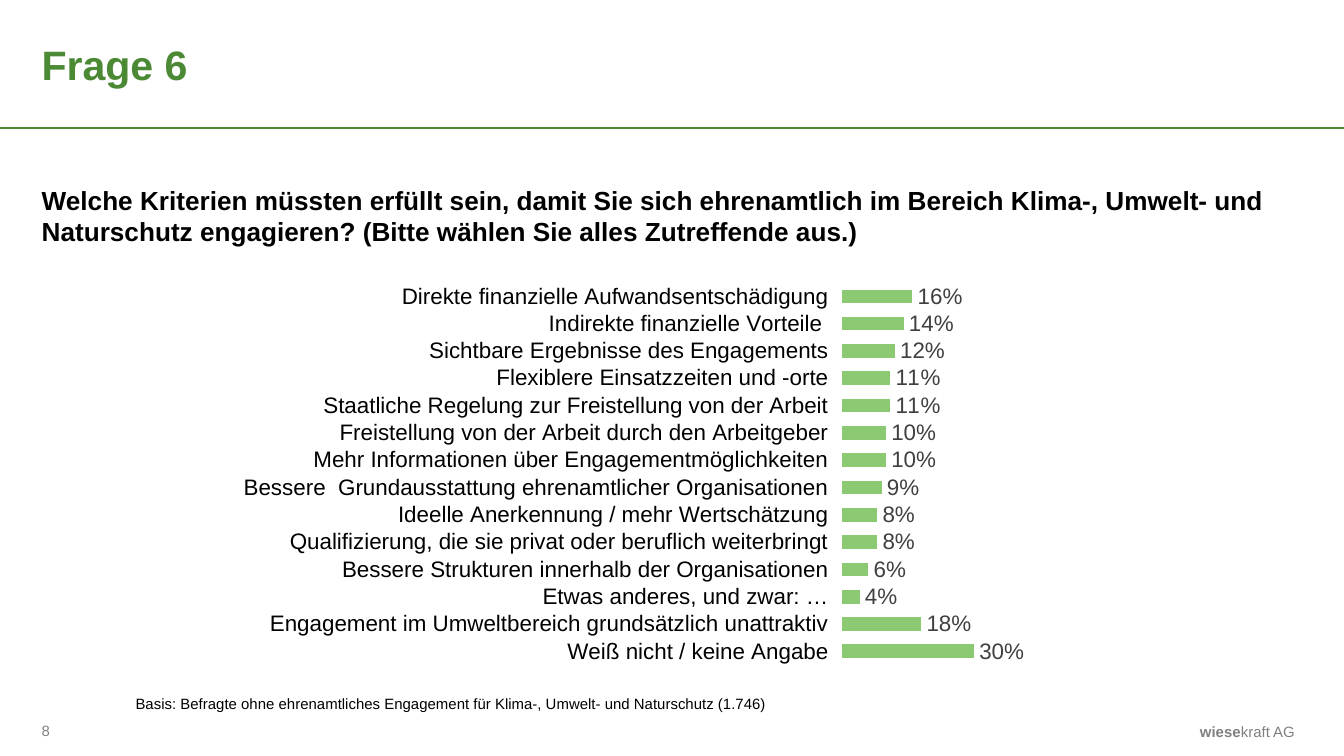
from lxml import etree
from pptx import Presentation
from pptx.chart.data import CategoryChartData
from pptx.dml.color import RGBColor
from pptx.enum.chart import XL_CHART_TYPE, XL_LABEL_POSITION, XL_TICK_LABEL_POSITION, XL_TICK_MARK
from pptx.enum.shapes import MSO_CONNECTOR
from pptx.enum.text import MSO_ANCHOR, PP_ALIGN
from pptx.oxml.ns import qn
from pptx.util import Inches, Pt

BAR = XL_CHART_TYPE.BAR_CLUSTERED
OUTSIDE_END = XL_LABEL_POSITION.OUTSIDE_END
LOW = XL_TICK_LABEL_POSITION.LOW
NO_TICK = XL_TICK_MARK.NONE
STRAIGHT = MSO_CONNECTOR.STRAIGHT
TOP, MIDDLE = MSO_ANCHOR.TOP, MSO_ANCHOR.MIDDLE
LEFT = PP_ALIGN.LEFT

HEADING = "Frage 6"
QUESTION = ("Welche Kriterien müssten erfüllt sein, damit Sie sich ehrenamtlich im Bereich "
            "Klima-, Umwelt- und Naturschutz engagieren? (Bitte wählen Sie alles Zutreffende aus.)")
BASIS = "Basis: Befragte ohne ehrenamtliches Engagement für Klima-, Umwelt- und Naturschutz (1.746)"
PAGE = "8"
COMPANY = [("wiese", True), ("kraft AG", False)]
CRITERIA = [
    ("Direkte finanzielle Aufwandsentschädigung", 0.16),
    ("Indirekte finanzielle Vorteile ", 0.14),
    ("Sichtbare Ergebnisse des Engagements", 0.12),
    ("Flexiblere Einsatzzeiten und -orte", 0.11),
    ("Staatliche Regelung zur Freistellung von der Arbeit", 0.11),
    ("Freistellung von der Arbeit durch den Arbeitgeber", 0.1),
    ("Mehr Informationen über Engagementmöglichkeiten", 0.1),
    ("Bessere  Grundausstattung ehrenamtlicher Organisationen", 0.09),
    ("Ideelle Anerkennung / mehr Wertschätzung", 0.08),
    ("Qualifizierung, die sie privat oder beruflich weiterbringt", 0.08),
    ("Bessere Strukturen innerhalb der Organisationen", 0.06),
    ("Etwas anderes, und zwar: …", 0.04),
    ("Engagement im Umweltbereich grundsätzlich unattraktiv", 0.18),
    ("Weiß nicht / keine Angabe", 0.3),
]
COLORS = {"green": "4B8934", "bar": "8BCA73", "text": "000000", "label": "404040", "footer": "808080"}
FONT = "Arial"
WIDTH, MARGIN = 10, 0.31
HEIGHT = WIDTH * 9 / 16
CONTENT_WIDTH = WIDTH - 2 * MARGIN
RULE_TOP = 0.95
PLOT = {"x": 0.635, "y": 0.049, "w": 0.349, "h": 0.903}


def rgb(name):
    return RGBColor.from_string(COLORS[name])


def style(font, size, color, bold=None):
    font.name, font.size = FONT, Pt(size)
    font.color.rgb = rgb(color)
    if bold is not None:
        font.bold = bold


def place(shape, left, top, width, height):
    shape.left, shape.top = Inches(left), Inches(top)
    shape.width, shape.height = Inches(width), Inches(height)


def write(shape, runs, size, color, bold=None, insets=(0, 0, 0, 0), anchor=MIDDLE, wrap=True):
    frame = shape.text_frame
    frame.word_wrap, frame.vertical_anchor = wrap, anchor
    (frame.margin_left, frame.margin_top,
     frame.margin_right, frame.margin_bottom) = map(Inches, insets)
    paragraph = frame.paragraphs[0]
    paragraph.alignment = LEFT
    style(paragraph.font, size, color, bold)
    for text, run_bold in runs:
        run = paragraph.add_run()
        run.text = text
        if run_bold is not None:
            run.font.bold = run_bold
    return paragraph


def add_text(slide, box, runs, size, color, **options):
    shape = slide.shapes.add_textbox(*map(Inches, box))
    write(shape, runs, size, color, **options)


def add_criteria_chart(slide):
    data = CategoryChartData(number_format="0%")
    data.categories = [criterion for criterion, share in CRITERIA]
    data.add_series("Series 1", [share for criterion, share in CRITERIA])
    box = map(Inches, (MARGIN, 1.95, CONTENT_WIDTH, 3.15))
    chart = slide.shapes.add_chart(BAR, *box, data).chart
    chart.has_legend = chart.has_title = False
    style(chart.font, 12, "text")

    criteria = chart.category_axis
    criteria.reverse_order = True
    criteria.tick_label_position = LOW
    criteria.major_tick_mark = criteria.minor_tick_mark = NO_TICK
    criteria.format.line.fill.background()
    style(criteria.tick_labels.font, 12, "text")

    shares = chart.value_axis
    shares.minimum_scale, shares.maximum_scale, shares.major_unit = 0, 1, 0.1
    shares.has_major_gridlines = shares.visible = False

    plot = chart.plots[0]
    plot.gap_width, plot.overlap, plot.vary_by_categories = 100, -10, False
    bars = plot.series[0].format
    bars.fill.solid()
    bars.fill.fore_color.rgb = rgb("bar")
    plot.has_data_labels = True
    labels = plot.data_labels
    labels.show_value, labels.position = True, OUTSIDE_END
    labels.number_format, labels.number_format_is_linked = "0%", False
    style(labels.font, 12, "label")

    area = plot._element.getparent()
    for old in area.findall(qn("c:layout")):
        area.remove(old)
    layout = etree.Element(qn("c:layout"))
    area.insert(0, layout)
    manual = etree.SubElement(layout, qn("c:manualLayout"))
    settings = {"layoutTarget": "inner", "xMode": "edge", "yMode": "edge", **PLOT}
    for tag, value in settings.items():
        etree.SubElement(manual, qn(f"c:{tag}")).set("val", str(value))


def main():
    deck = Presentation()
    deck.slide_width, deck.slide_height = Inches(WIDTH), Inches(HEIGHT)
    slide = deck.slides.add_slide(deck.slide_layouts[1])

    rule = slide.shapes.add_connector(STRAIGHT, 0, Inches(RULE_TOP), Inches(WIDTH), Inches(RULE_TOP))
    rule.line.color.rgb, rule.line.width = rgb("green"), Pt(1)
    etree.SubElement(rule._element.spPr, qn("a:effectLst"))

    title, question = slide.placeholders
    place(title, MARGIN, 0.3, CONTENT_WIDTH, 0.35)
    write(title, [(HEADING, None)], 22, "green", bold=True)

    place(question, MARGIN, 1.26, CONTENT_WIDTH, 0.7)
    wording = write(question, [(QUESTION, None)], 14, "text", bold=True,
                    insets=(0, 0.11, 0, 0), anchor=TOP)
    wording.space_before, wording.space_after = Pt(0), Pt(6)
    properties = wording._p.get_or_add_pPr()
    properties.set("marL", "0")
    properties.set("indent", "0")
    bullet = etree.Element(qn("a:buNone"))
    properties.find(qn("a:defRPr")).addprevious(bullet)

    add_criteria_chart(slide)
    add_text(slide, (0.91, 5.1, 9.09, 0.33), [(BASIS, None)], 8, "text",
             insets=(0.1, 0.1, 0.1, 0.1), anchor=TOP)
    add_text(slide, (MARGIN, 5.35, 0.28, 0.17), [(PAGE, None)], 8, "footer")
    add_text(slide, (8.83, 5.32, 0.86, 0.24), COMPANY, 8, "footer",
             insets=(0.1, 0.05, 0, 0.05), wrap=False)
    deck.save("out.pptx")


if __name__ == "__main__":
    main()
